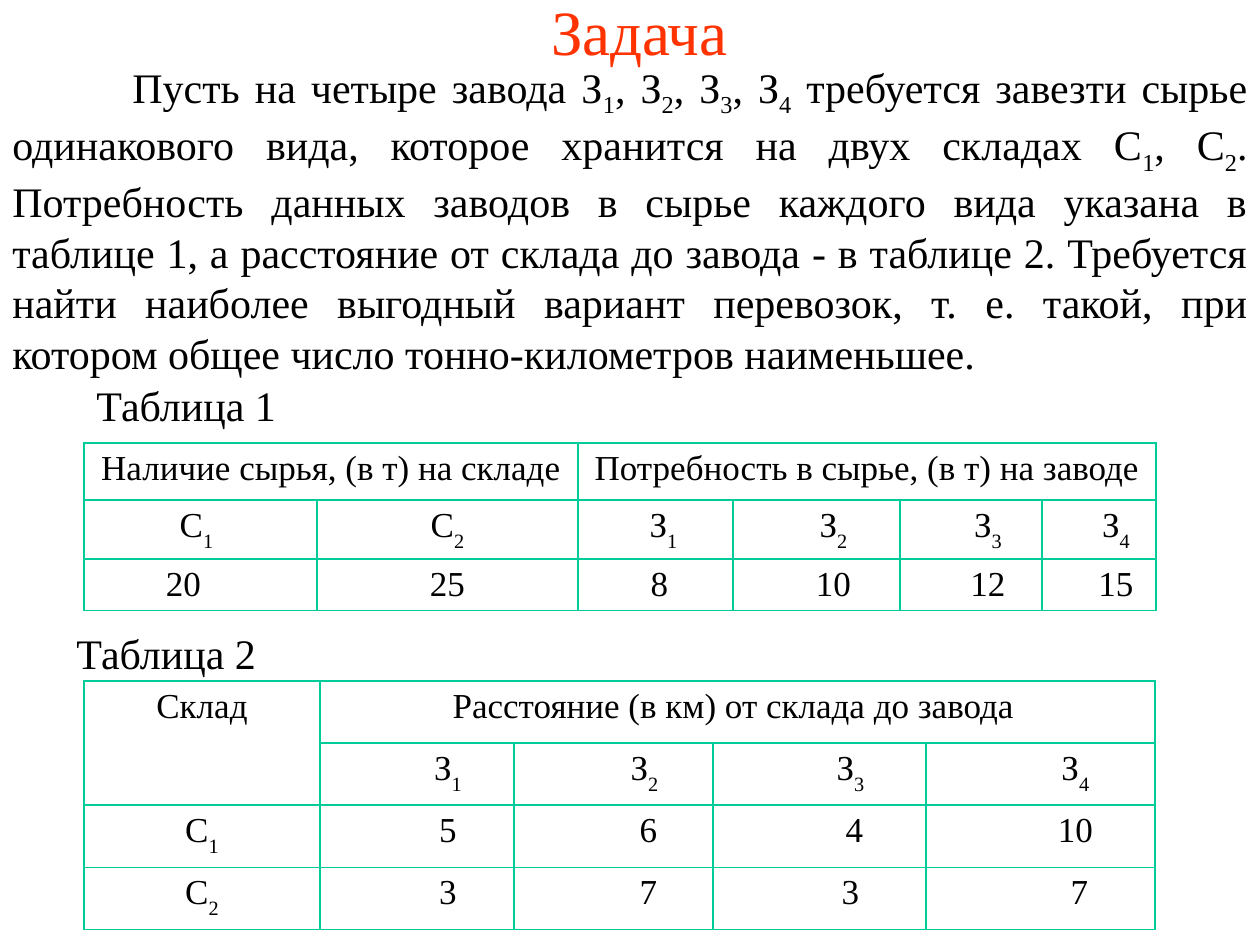
import pptx
import pptx.dml.color
import pptx.enum.text
import pptx.oxml
import pptx.oxml.ns
import pptx.util

PX = 914400 // 126
FONT = "Times New Roman"
RED = pptx.dml.color.RGBColor(0xFF, 0x33, 0x00)
BLACK = pptx.dml.color.RGBColor(0x00, 0x00, 0x00)
GREEN = pptx.dml.color.RGBColor(0x00, 0xCC, 0x99)
ALIGN = pptx.enum.text.PP_ALIGN
PAD = 12

TASK = (
    "Пусть на четыре завода З_1, З_2, З_3, З_4 требуется завезти сырье "
    "одинакового вида, которое хранится на двух складах С_1, С_2. "
    "Потребность данных заводов в сырье каждого вида указана в таблице 1, "
    "а расстояние от склада до завода - в таблице 2. Требуется найти "
    "наиболее выгодный вариант перевозок, т. е. такой, при котором общее "
    "число тонно-километров наименьшее."
)

STOCK = [
    [("Наличие сырья, (в т) на складе", 0), None,
     ("Потребность в сырье, (в т) на заводе", 0), None, None, None],
    [("С_1", -4), ("С_2", 0), ("З_1", 8), ("З_2", 17), ("З_3", 17), ("З_4", 17)],
    [("20", -17), ("25", 0), ("8", 4), ("10", 17), ("12", 17), ("15", 17)],
]
ROADS = [
    [("Склад", 0), ("Расстояние (в км) от склада до завода", -4), None, None, None],
    [None, ("З_1", 31), ("З_2", 31), ("З_3", 31), ("З_4", 35)],
    [("C_1", 0), ("5", 31), ("6", 35), ("4", 35), ("10", 35)],
    [("С_2", 0), ("3", 31), ("7", 35), ("3", 31), ("7", 39)],
]


def scale(*sizes):
    """Turn px lengths into EMU."""
    return [size * PX for size in sizes]


def style(run, size, color=BLACK):
    """Set the font of one run."""
    run.font.name = FONT
    run.font.size = pptx.util.Pt(size)
    run.font.bold = False
    run.font.color.rgb = color


def write(para, text, size, drop):
    """Write text in which each underscore lowers the next character."""
    head, *tails = text.split("_")
    parts = [(head, 0)]
    for tail in tails:
        parts += [(tail[0], drop), (tail[1:], 0)]
    for part, base in parts:
        if part:
            run = para.add_run()
            run.text = part
            style(run, size)
            if base:
                run.font._element.set("baseline", str(base * 1000))


def add_title(slide, box, text):
    """Place the title in its box."""
    title = slide.shapes.title
    title.left, title.top, title.width, title.height = scale(*box)
    frame = title.text_frame
    frame.text = text
    frame.auto_size = pptx.enum.text.MSO_AUTO_SIZE.NONE
    frame.vertical_anchor = pptx.enum.text.MSO_ANCHOR.MIDDLE
    frame.paragraphs[0].alignment = ALIGN.CENTER
    style(frame.paragraphs[0].runs[0], 36, RED)


def add_text(slide, box, text, align=ALIGN.LEFT, indent=0):
    """Place one wrapped paragraph in its box."""
    frame = slide.shapes.add_textbox(*scale(*box)).text_frame
    frame.word_wrap = True
    para = frame.paragraphs[0]
    para.alignment = align
    write(para, text, 24, -25)
    if indent:
        para._p.get_or_add_pPr().set("indent", str(indent * PX))


def add_lines(cell):
    """Draw the four borders of a cell."""
    props = cell._tc.get_or_add_tcPr()
    for spot, side in enumerate("LRTB"):
        line = pptx.oxml.parse_xml(
            f'<a:ln{side} {pptx.oxml.ns.nsdecls("a")} w="12700"><a:solidFill>'
            f'<a:srgbClr val="{GREEN}"/></a:solidFill></a:ln{side}>'
        )
        props.insert(spot, line)


def add_grid(slide, spot, cols, rows, data, spans):
    """Place a table at a spot, with each text shifted from the cell centre."""
    box = (*spot, sum(cols), sum(rows))
    table = slide.shapes.add_table(len(rows), len(cols), *scale(*box)).table
    table.first_row = table.horz_banding = False
    for col, width in zip(table.columns, scale(*cols)):
        col.width = width
    for row, height in zip(table.rows, scale(*rows)):
        row.height = height
    for first, last in spans:
        table.cell(*first).merge(table.cell(*last))
    for r, line in enumerate(data):
        for c, item in enumerate(line):
            cell = table.cell(r, c)
            cell.fill.background()
            add_lines(cell)
            if item:
                text, shift = item
                cell.margin_left = (PAD + max(0, 2 * shift)) * PX
                cell.margin_right = (PAD + max(0, -2 * shift)) * PX
                para = cell.text_frame.paragraphs[0]
                para.alignment = ALIGN.CENTER
                write(para, text, 20, -30)


def main():
    """Build the slide and save it."""
    deck = pptx.Presentation()
    deck.slide_width, deck.slide_height = scale(1260, 945)
    slide = deck.slides.add_slide(deck.slide_layouts[5])
    add_title(slide, (74, 0, 1131, 60), "Задача")
    add_grid(slide, (84, 443), (233, 261, 155, 167, 142, 114), (57, 59, 51),
             STOCK, [((0, 0), (0, 1)), ((0, 2), (0, 5))])
    add_text(slide, (0, 55, 1260, 318), TASK, ALIGN.JUSTIFY, 120)
    add_grid(slide, (84, 681), (236, 194, 199, 213, 229), (62,) * 4,
             ROADS, [((0, 0), (1, 0)), ((0, 1), (0, 4))])
    add_text(slide, (84, 373, 348, 63), "Таблица 1")
    add_text(slide, (64, 621, 348, 63), "Таблица 2")
    deck.save("out.pptx")


if __name__ == "__main__":
    main()
